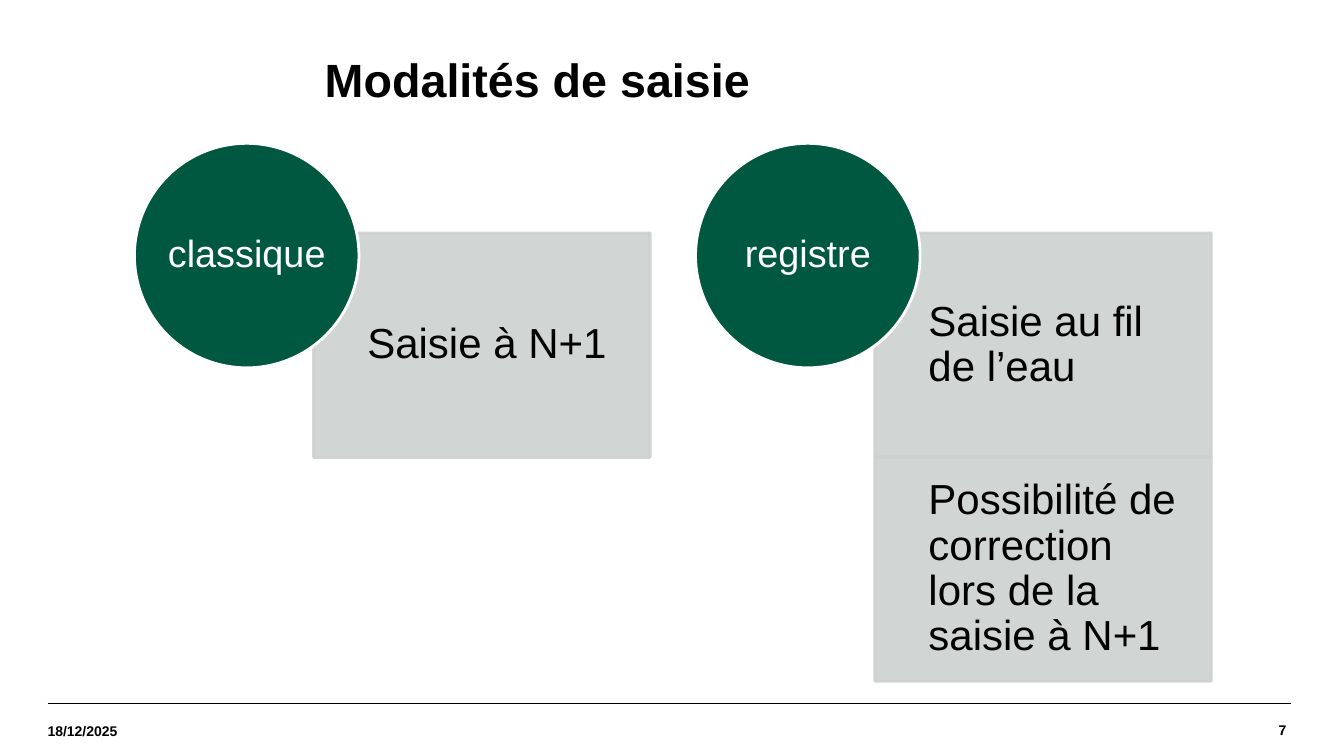
from dataclasses import dataclass

from lxml import etree
from pptx import Presentation
from pptx import util as u
from pptx.dml.color import RGBColor
from pptx.enum import shapes, text
from pptx.oxml.ns import qn


@dataclass(frozen=True)
class Theme:
    font: str = "Arial"
    ink: str = "000000"
    paper: str = "FFFFFF"
    circle: str = "005841"
    card: str = "CCD1CF"
    card_opacity: int = 90
    title_size: float = 33.3
    circle_size: float = 27
    card_size: float = 30
    footer_size: float = 10
    outline: float = 2
    rule: float = 0.8


class SlideBuilder:
    """Places elements on a grid of square cells, 24 across the slide."""

    COLUMNS = 24

    def __init__(self, presentation, theme):
        self.theme = theme
        self.cell = presentation.slide_width / self.COLUMNS
        self.slide = presentation.slides.add_slide(presentation.slide_layouts[6])

    def grid(self, *cells):
        return [round(count * self.cell) for count in cells]

    def set_text(self, shape, wording, size, color, bold=False, spacing=1.0,
                 align=text.PP_ALIGN.LEFT, insets=(0, 0, 0, 0)):
        """Fill a shape with one paragraph; insets are left, top, right, bottom."""
        frame = shape.text_frame
        frame.word_wrap = True
        frame.vertical_anchor = text.MSO_ANCHOR.MIDDLE
        (frame.margin_left, frame.margin_top,
         frame.margin_right, frame.margin_bottom) = self.grid(*insets)
        frame.text = wording
        paragraph = frame.paragraphs[0]
        paragraph.alignment = align
        paragraph.line_spacing = spacing
        font = paragraph.runs[0].font
        font.name, font.size, font.bold = self.theme.font, u.Pt(size), bold
        font.color.rgb = RGBColor.from_string(color)

    def label(self, box, wording, size, **style):
        shape = self.slide.shapes.add_textbox(*self.grid(*box))
        self.set_text(shape, wording, size, self.theme.ink, bold=True, **style)

    def panel(self, kind, box, fill, line, opacity=100):
        shape = self.slide.shapes.add_shape(kind, *self.grid(*box))
        shape.shadow.inherit = False
        shape.fill.solid()
        shape.fill.fore_color.rgb = RGBColor.from_string(fill)
        shape.line.color.rgb = RGBColor.from_string(line)
        shape.line.width = u.Pt(self.theme.outline)
        if opacity < 100:
            properties = shape.element.spPr
            for color in properties.iter(qn("a:srgbClr")):
                etree.SubElement(color, qn("a:alpha"), val=str(opacity * 1000))
        return shape

    def card(self, box, wording):
        theme = self.theme
        shape = self.panel(shapes.MSO_SHAPE.RECTANGLE, box, theme.card, theme.card,
                           theme.card_opacity)
        self.set_text(shape, wording, theme.card_size, theme.ink, spacing=0.9,
                      insets=(0.96, 0.41, 0.41, 0.41))

    def circle(self, box, wording):
        theme = self.theme
        shape = self.panel(shapes.MSO_SHAPE.OVAL, box, theme.circle, theme.paper)
        self.set_text(shape, wording, theme.circle_size, theme.paper, spacing=0.9,
                      align=text.PP_ALIGN.CENTER)

    def mode(self, left, name, details):
        """Stack detail cards under a circle that overlaps the first one."""
        for index, detail in enumerate(details):
            self.card((left + 3.2, 4.16 + 4 * index, 6.01, 4.01), detail)
        self.circle((left, 2.56, 4.01, 4.01), name)

    def rule(self, left, right, top):
        line = self.slide.shapes.add_connector(
            shapes.MSO_CONNECTOR.STRAIGHT, *self.grid(left, top, right, top))
        line.line.color.rgb = RGBColor.from_string(self.theme.ink)
        line.line.width = u.Pt(self.theme.rule)
        etree.SubElement(line.element.spPr, qn("a:effectLst"))


def main():
    presentation = Presentation()
    presentation.slide_width = u.Inches(13.33)
    presentation.slide_height = u.Inches(7.5)
    theme = Theme()
    builder = SlideBuilder(presentation, theme)

    builder.rule(0.85, 23.06, 12.56)
    builder.label((19.42, 12.56, 3.55, 0.94), "7", theme.footer_size,
                  align=text.PP_ALIGN.RIGHT)
    builder.label((0.85, 12.6, 3.17, 0.9), "18/12/2025", theme.footer_size)
    builder.label((5.58, 0.76, 18.42, 1.42), "Modalités de saisie", theme.title_size,
                  spacing=0.9, insets=(0.22, 0.09, 0.18, 0.09))

    modes = [
        ("classique", ["Saisie à N+1"]),
        ("registre", ["Saisie au fil de l’eau",
                      "Possibilité de correction lors de la saisie à N+1"]),
    ]
    for index, (name, details) in enumerate(modes):
        builder.mode(2.4 + 10.02 * index, name, details)

    presentation.save("out.pptx")


if __name__ == "__main__":
    main()
